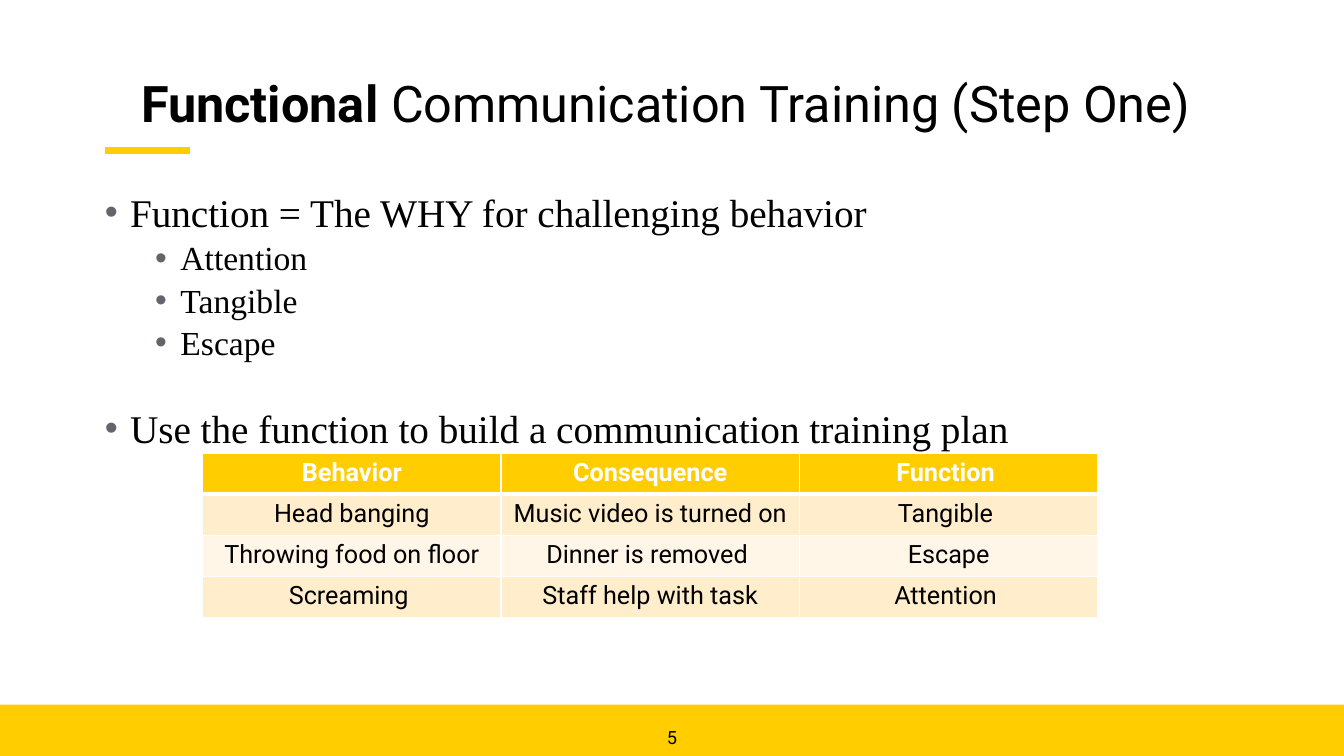
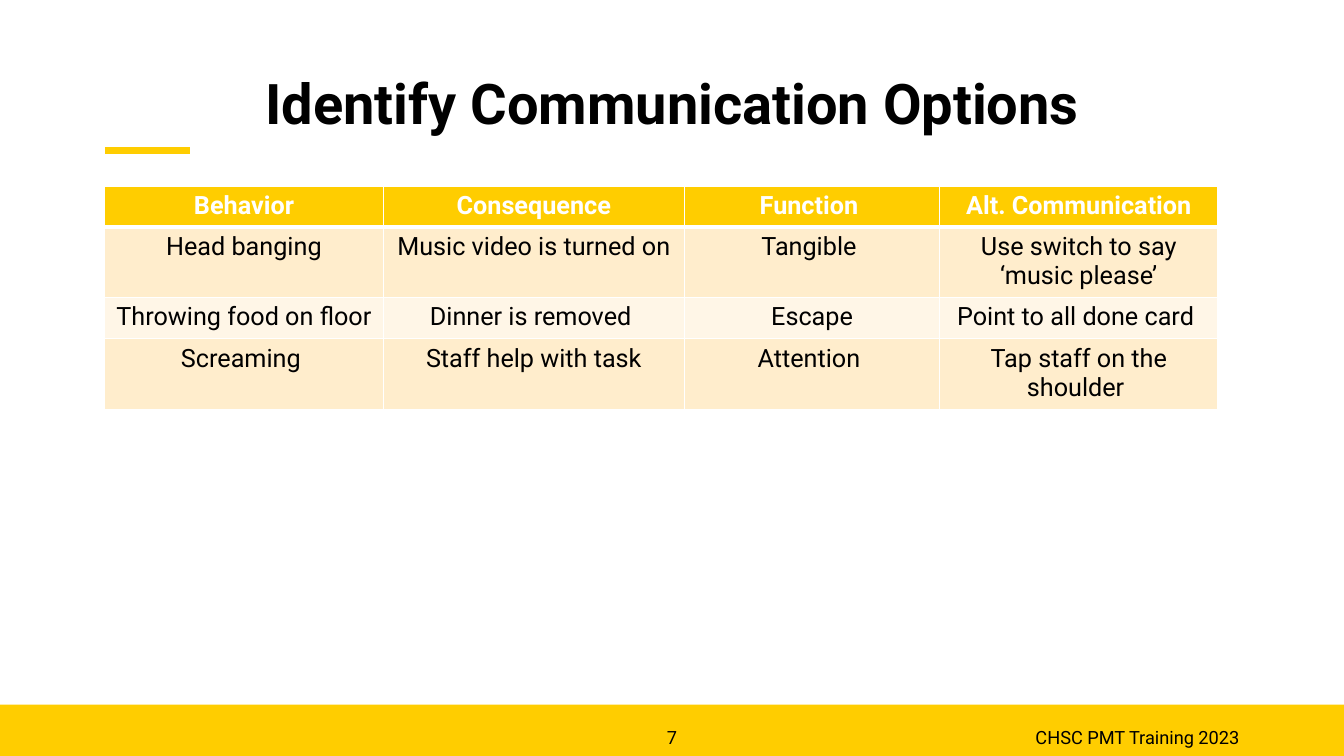
"""Build two slides on functional communication training."""
from pptx import Presentation
from pptx.dml.color import RGBColor
from pptx.enum.shapes import MSO_CONNECTOR, MSO_SHAPE
from pptx.enum.text import MSO_ANCHOR, PP_ALIGN
from pptx.oxml.ns import qn
from pptx.util import Inches, Pt
from lxml.etree import SubElement

GOLD = RGBColor(0xFF, 0xCD, 0x00)
DARK_ROW = RGBColor(0xFF, 0xED, 0xCC)
LIGHT_ROW = RGBColor(0xFF, 0xF6, 0xE7)
BULLET_GREY = RGBColor(0x62, 0x66, 0x6A)
BLACK = RGBColor(0, 0, 0)
WHITE = RGBColor(0xFF, 0xFF, 0xFF)
SANS, SERIF = "Roboto", "Times New Roman"
MARGIN = 1.04
FOOTER_TOP, FOOTER_HEIGHT = 7.16, 0.26
HEADER_HEIGHT, LINE_HEIGHT, DOUBLE_HEIGHT = 0.39, 0.41, 0.69

BEHAVIORS = [
    ["Behavior", "Consequence", "Function "],
    ["Head banging", "Music video is turned on", "Tangible "],
    ["Throwing food on floor", "Dinner is removed ", "Escape"],
    ["Screaming ", "Staff help with task", "Attention "],
]
ALTERNATIVES = [
    "Alt. Communication",
    "Use switch to say ‘music please’",
    "Point to all done card ",
    "Tap staff on the shoulder ",
]
POINTS = [
    (0, 0, "Function = The WHY for challenging behavior"),
    (1, 1.3, "Attention"),
    (1, 1.3, "Tangible"),
    (1, 1.3, "Escape"),
    (0, 30, "Use the function to build a communication training plan"),
]


def write(paragraph, text, size=18, bold=False, color=BLACK, font=SANS,
          align=PP_ALIGN.CENTER):
    """Append a formatted run to a paragraph."""
    paragraph.alignment = align
    run = paragraph.add_run()
    run.text = text
    run.font.size = Pt(size)
    run.font.bold = bold
    run.font.name = font
    run.font.color.rgb = color


def add_frame(slide, left, top, width, height, anchor=MSO_ANCHOR.TOP):
    """Add a wrapping text box without insets and return its frame."""
    frame = slide.shapes.add_textbox(
        Inches(left), Inches(top), Inches(width), Inches(height)).text_frame
    frame.word_wrap = True
    frame.vertical_anchor = anchor
    frame.margin_left = frame.margin_right = 0
    frame.margin_top = frame.margin_bottom = 0
    return frame


def add_base(prs, number, title_runs, title_size):
    """Add a slide with the shared band, accent, number and title."""
    slide = prs.slides.add_slide(prs.slide_layouts[6])
    band = slide.shapes.add_shape(
        MSO_SHAPE.RECTANGLE, 0, Inches(6.99), prs.slide_width, Inches(0.51))
    band.shadow.inherit = False
    band.fill.solid()
    band.fill.fore_color.rgb = GOLD
    band.line.fill.background()

    accent = slide.shapes.add_connector(
        MSO_CONNECTOR.STRAIGHT, Inches(MARGIN), Inches(1.49),
        Inches(1.88), Inches(1.49))
    accent.line.color.rgb = GOLD
    accent.line.width = Pt(5)
    SubElement(accent._element.spPr, qn("a:effectLst"))

    page = add_frame(slide, 6.34, FOOTER_TOP, 0.65, FOOTER_HEIGHT,
                     MSO_ANCHOR.BOTTOM)
    write(page.paragraphs[0], str(number), size=13)

    title = add_frame(slide, MARGIN, 0.58, 11.25, 0.95,
                      MSO_ANCHOR.MIDDLE).paragraphs[0]
    title.line_spacing = 0.9
    for text, bold in title_runs:
        write(title, text, size=title_size, bold=bold)
    return slide


def set_bullet(paragraph, level):
    """Give a paragraph a grey hanging bullet for its level."""
    props = paragraph._p.get_or_add_pPr()
    props.set("marL", str(Inches(0.25 + 0.5 * level)))
    props.set("indent", str(Inches(-0.25)))
    color = SubElement(props, qn("a:buClr"))
    SubElement(color, qn("a:srgbClr"), val=str(BULLET_GREY))
    SubElement(props, qn("a:buSzPct"), val="100000" if level else "95000")
    SubElement(props, qn("a:buFont"), typeface="Arial")
    SubElement(props, qn("a:buChar"), char="•")


def add_points(slide, points):
    """Add the bulleted body text."""
    frame = add_frame(slide, MARGIN, 1.87, 11.27, 2.6)
    for index, (level, gap, text) in enumerate(points):
        paragraph = frame.add_paragraph() if index else frame.paragraphs[0]
        set_bullet(paragraph, level)
        paragraph.level = level
        if gap:
            paragraph.space_before = Pt(gap)
        write(paragraph, text, size=24 if level else 28, font=SERIF,
              align=PP_ALIGN.LEFT)


def set_borders(cell, top, bottom):
    """Draw white borders around a cell, with widths in points."""
    props = cell._tc.get_or_add_tcPr()
    for side, width in (("L", 1), ("R", 1), ("T", top), ("B", bottom)):
        border = SubElement(props, qn(f"a:ln{side}"), w=str(Pt(width)))
        fill = SubElement(border, qn("a:solidFill"))
        SubElement(fill, qn("a:srgbClr"), val=str(WHITE))


def add_behavior_table(slide, left, top, widths, heights, rows):
    """Add a table with a gold header and alternating body rows."""
    table = slide.shapes.add_table(
        len(rows), len(widths), Inches(left), Inches(top),
        Inches(sum(widths)), Inches(sum(heights))).table
    table.horz_banding = False
    for column, width in zip(table.columns, widths):
        column.width = Inches(width)
    for index, (row, height, texts) in enumerate(
            zip(table.rows, heights, rows)):
        row.height = Inches(height)
        header = index == 0
        row_fill = GOLD if header else DARK_ROW if index % 2 else LIGHT_ROW
        for cell, text in zip(row.cells, texts):
            set_borders(cell, 3 if index == 1 else 1, 3 if header else 1)
            cell.fill.solid()
            cell.fill.fore_color.rgb = row_fill
            write(cell.text_frame.paragraphs[0], text, bold=header,
                  color=WHITE if header else BLACK)


def main():
    """Build and save the presentation."""
    prs = Presentation()
    prs.slide_width, prs.slide_height = Inches(13.33), Inches(7.5)

    step_one = add_base(prs, 5, [
        ("Functional ", True),
        ("Communication Training (Step One) ", False)], 36)
    add_points(step_one, POINTS)
    add_behavior_table(step_one, 2.01, 4.5, [2.96] * 3,
                       [HEADER_HEIGHT] + [LINE_HEIGHT] * 3, BEHAVIORS)

    options = add_base(prs, 7, [("Identify Communication Options", True)], 40)
    credit = add_frame(options, 7.34, FOOTER_TOP, 4.95, FOOTER_HEIGHT,
                       MSO_ANCHOR.BOTTOM)
    write(credit.paragraphs[0], "CHSC PMT Training 2023", size=13,
          align=PP_ALIGN.RIGHT)
    add_behavior_table(
        options, MARGIN, 1.85, [2.76, 2.99, 2.53, 2.76],
        [HEADER_HEIGHT, DOUBLE_HEIGHT, LINE_HEIGHT, DOUBLE_HEIGHT],
        [row + [alternative]
         for row, alternative in zip(BEHAVIORS, ALTERNATIVES)])

    prs.save("out.pptx")


if __name__ == "__main__":
    main()
